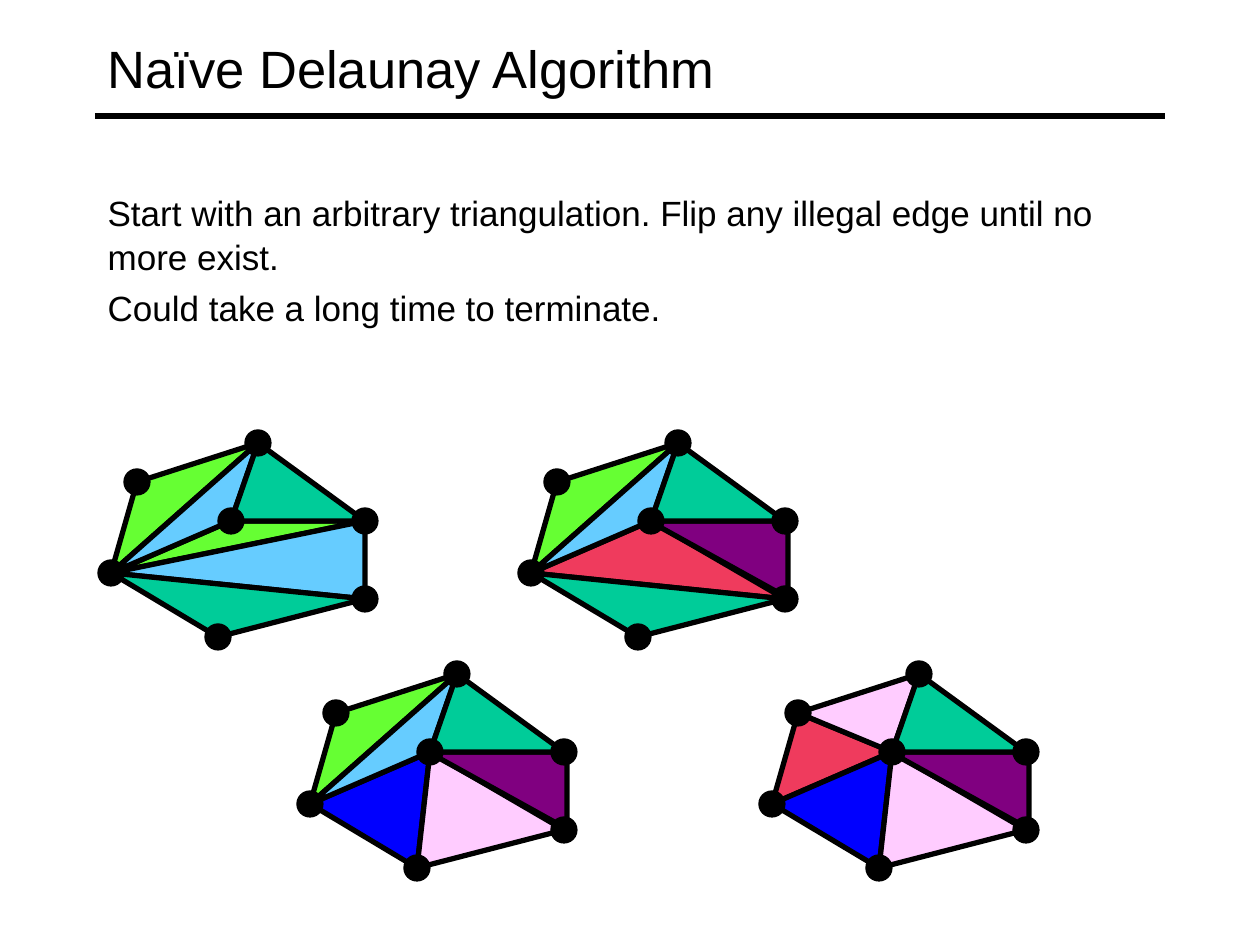
"""Build the slide on the naïve Delaunay algorithm with four triangulation stages."""
from lxml.etree import SubElement
from pptx import Presentation
from pptx.dml.color import RGBColor
from pptx.enum.shapes import MSO_CONNECTOR, MSO_SHAPE
from pptx.enum.text import MSO_ANCHOR, MSO_AUTO_SIZE, PP_ALIGN
from pptx.oxml.ns import qn
from pptx.util import Pt

PX = 914400 / 126
COLORS = {
    "black": "000000", "lime": "66FF33", "sky": "66CCFF", "teal": "00CC99",
    "red": "EF3B5D", "purple": "800080", "blue": "0000FF", "pink": "FFCCFF",
}
SITES = {
    "N": (147, -130), "C": (120, -52), "NW": (26, -91), "E": (254, -52),
    "W": (0, 0), "S": (107, 64), "SE": (254, 26),
}
CORNERS = SITES | {"C2": (118, -52), "E2": (257, -52), "SE2": (257, 25)}
RADIUS = 13

LIME = ("lime", "W NW N")
SKY = ("sky", "W N C")
TEAL = ("teal", "N C E")
BOTTOM = ("teal", "W SE S")
PURPLE = ("purple", "C2 E2 SE2")
BLUE = ("blue", "W C S")
PINK = ("pink", "S C SE")
STAGES = [
    (111, 573, [("lime", "W C E"), ("sky", "W SE E"), BOTTOM, LIME, SKY, TEAL]),
    (531, 573, [("red", "W C SE"), PURPLE, BOTTOM, LIME, SKY, TEAL]),
    (310, 804, [BLUE, PINK, PURPLE, LIME, SKY, TEAL]),
    (772, 804, [("red", "W NW C"), ("pink", "NW N C"), BLUE, PINK, PURPLE, TEAL]),
]


def emu(px):
    return round(px * PX)


def paint(sp, fill, width):
    sp.shadow.inherit = False
    sp.fill.solid()
    sp.fill.fore_color.rgb = RGBColor.from_string(COLORS[fill])
    sp.line.color.rgb = RGBColor.from_string(COLORS["black"])
    sp.line.width = Pt(width)


prs = Presentation()
prs.slide_width, prs.slide_height = emu(1260), emu(945)
s = prs.slides.add_slide(prs.slide_layouts[1])

rule = s.shapes.add_connector(MSO_CONNECTOR.STRAIGHT, emu(95), emu(116), emu(1165), emu(116))
rule.line.color.rgb = RGBColor.from_string(COLORS["black"])
rule.line.width = Pt(3)
SubElement(rule._element.spPr, qn("a:effectLst"))

texts = [
    (s.shapes.title, 10, 116, 30, MSO_ANCHOR.MIDDLE, ["Naïve Delaunay Algorithm"]),
    (s.placeholders[1], 183, 252, 20, MSO_ANCHOR.TOP, [
        "Start with an arbitrary triangulation. Flip any illegal edge until no more exist.",
        "Could take a long time to terminate.",
    ]),
]
for sp, top, height, size, anchor, lines in texts:
    sp.left, sp.top, sp.width, sp.height = emu(95), emu(top), emu(1071), emu(height)
    tf = sp.text_frame
    tf.word_wrap = True
    tf.auto_size = MSO_AUTO_SIZE.NONE
    tf.vertical_anchor = anchor
    for i, line in enumerate(lines):
        p = tf.add_paragraph() if i else tf.paragraphs[0]
        p.alignment = PP_ALIGN.LEFT
        if sp != s.shapes.title:
            p.line_spacing = 1.05
            p.space_before = Pt(4)
        pPr = p._p.get_or_add_pPr()
        pPr.set("marL", str(emu(48 * i)))
        pPr.set("indent", str(emu(-48 * i)))
        SubElement(pPr, qn("a:buNone"))
        r = p.add_run()
        r.text = line
        r.font.name = "Arial"
        r.font.size = Pt(size)
        r.font.color.rgb = RGBColor.from_string(COLORS["black"])

for x, y, triangles in STAGES:
    stage = s.shapes.add_group_shape()
    for color, names in triangles:
        pts = [(x + CORNERS[n][0], y + CORNERS[n][1]) for n in names.split()]
        fb = stage.shapes.build_freeform(*pts[0], scale=PX)
        fb.add_line_segments(pts[1:], close=True)
        paint(fb.convert_to_shape(), color, 3)
    for dx, dy in SITES.values():
        dot = stage.shapes.add_shape(
            MSO_SHAPE.OVAL, emu(x + dx - RADIUS), emu(y + dy - RADIUS),
            emu(2 * RADIUS), emu(2 * RADIUS))
        paint(dot, "black", 0.75)

prs.save("out.pptx")
